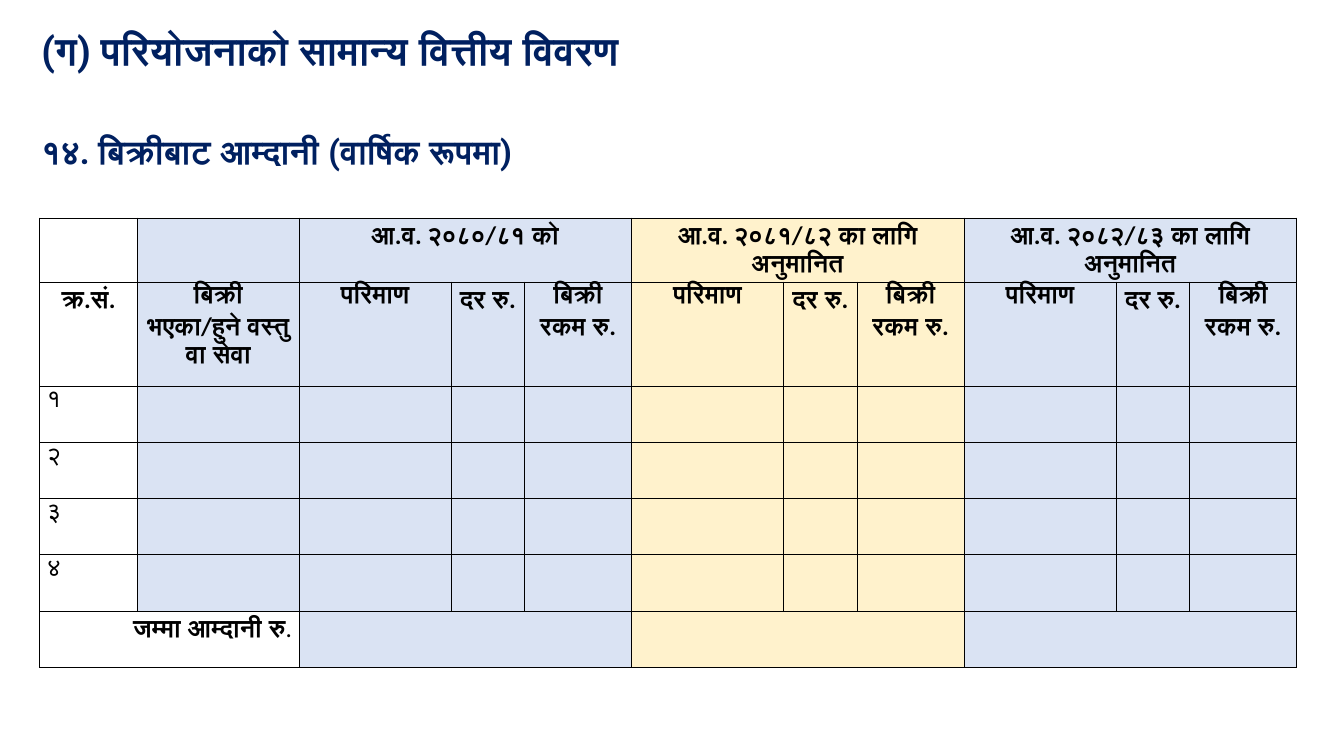
from lxml.etree import SubElement
from pptx import Presentation
from pptx.dml.color import RGBColor
from pptx.enum.text import MSO_ANCHOR as Anchor, MSO_AUTO_SIZE as AutoSize, PP_ALIGN as Align
from pptx.oxml.ns import qn
from pptx.util import Pt

NAVY, BLACK, BLUE, CREAM = "002060", "000000", "DAE3F3", "FFF2CC"
YEARS = [
    ("आ.व. २०८०/८१ को", BLUE),
    ("आ.व. २०८१/८२ का लागि अनुमानित", CREAM),
    ("आ.व. २०८२/८३ का लागि अनुमानित", BLUE),
]
YEAR_COLUMNS = ["परिमाण", "दर रु.", "बिक्री रकम रु."]
ITEM_COLUMNS = ["क्र.सं.", "बिक्री भएका/हुने वस्तु वा सेवा"]
SERIAL_NUMBERS = ["१", "२", "३", "४"]
COLUMN_WIDTHS = [70, 115.2] + [108.7, 52.6, 76.3] * len(YEARS)
ROW_HEIGHTS = [45.7, 74.3] + [40.2] * (len(SERIAL_NUMBERS) + 1)
COLUMN_FILLS = [None, BLUE] + [fill for _, fill in YEARS for _ in YEAR_COLUMNS]


def color(value):
    return RGBColor.from_string(value)


def set_values(target, values):
    for name, value in values.items():
        setattr(target, name, value)


def add_run(paragraph, text, font, size, ink, bold=True):
    run = paragraph.add_run()
    run.text = text
    set_values(run.font, {"name": font, "size": Pt(size), "bold": bold})
    run.font.color.rgb = color(ink)


def add_heading(slide, heading, subheading):
    title = slide.shapes.title
    set_values(title, {"left": Pt(22.3), "top": Pt(13), "width": Pt(918), "height": Pt(113.8)})
    frame = title.text_frame
    set_values(frame, {"word_wrap": True, "auto_size": AutoSize.NONE, "vertical_anchor": Anchor.TOP})
    lines = [(heading, 28, 6), (subheading, 24, 33)]
    for index, (text, size, space) in enumerate(lines):
        paragraph = frame.add_paragraph() if index else frame.paragraphs[0]
        set_values(paragraph, {
            "alignment": Align.LEFT, "line_spacing": 1.07,
            "space_before": Pt(space), "space_after": Pt(6),
        })
        add_run(paragraph, text, "Roboto", size, NAVY)


def format_cell(cell, fill):
    set_values(cell, {
        "margin_left": Pt(5), "margin_right": Pt(5), "margin_top": 0, "margin_bottom": 0,
    })
    properties = cell._tc.get_or_add_tcPr()
    for side in ("a:lnL", "a:lnR", "a:lnT", "a:lnB"):
        line = SubElement(properties, qn(side), w=str(Pt(0.5)))
        SubElement(SubElement(line, qn("a:solidFill")), qn("a:srgbClr"), val=BLACK)
    if fill:
        cell.fill.solid()
        cell.fill.fore_color.rgb = color(fill)
    else:
        cell.fill.background()


def write_cell(cell, text, alignment=Align.CENTER, bold=True):
    paragraph = cell.text_frame.paragraphs[0]
    set_values(paragraph, {"alignment": alignment, "line_spacing": 1.07})
    add_run(paragraph, text, "Calibri", 18, BLACK, bold)
    return paragraph


def add_income_table(slide):
    frame = slide.shapes.add_table(
        len(ROW_HEIGHTS), len(COLUMN_WIDTHS), Pt(28.3), Pt(155.7),
        Pt(sum(COLUMN_WIDTHS)), Pt(sum(ROW_HEIGHTS)))
    table = frame.table
    set_values(table, {"first_row": False, "horz_banding": False})
    for column, width in zip(table.columns, COLUMN_WIDTHS):
        column.width = Pt(width)
    for row, height in zip(table.rows, ROW_HEIGHTS):
        row.height = Pt(height)
        for cell, fill in zip(row.cells, COLUMN_FILLS):
            format_cell(cell, fill)
    return table


def fill_income_table(table):
    total_row = len(ROW_HEIGHTS) - 1
    span = len(YEAR_COLUMNS)
    for index, (year, _) in enumerate(YEARS):
        first = len(ITEM_COLUMNS) + index * span
        for row in (0, total_row):
            table.cell(row, first).merge(table.cell(row, first + span - 1))
        write_cell(table.cell(0, first), year)
    for column, text in enumerate(ITEM_COLUMNS + YEAR_COLUMNS * len(YEARS)):
        write_cell(table.cell(1, column), text)
    for row, number in enumerate(SERIAL_NUMBERS, start=2):
        write_cell(table.cell(row, 0), number, Align.LEFT, False)
    total = table.cell(total_row, 0)
    total.merge(table.cell(total_row, 1))
    paragraph = write_cell(total, "जम्मा आम्दानी रु", Align.RIGHT)
    add_run(paragraph, ".", "Calibri", 18, BLACK, False)


def main():
    presentation = Presentation()
    set_values(presentation, {"slide_width": Pt(960), "slide_height": Pt(540)})
    slide = presentation.slides.add_slide(presentation.slide_layouts.get_by_name("Title Only"))
    add_heading(slide, "(ग) परियोजनाको सामान्य वित्तीय विवरण", "१४. बिक्रीबाट आम्दानी (वार्षिक रूपमा)")
    fill_income_table(add_income_table(slide))
    presentation.save("out.pptx")


if __name__ == "__main__":
    main()
